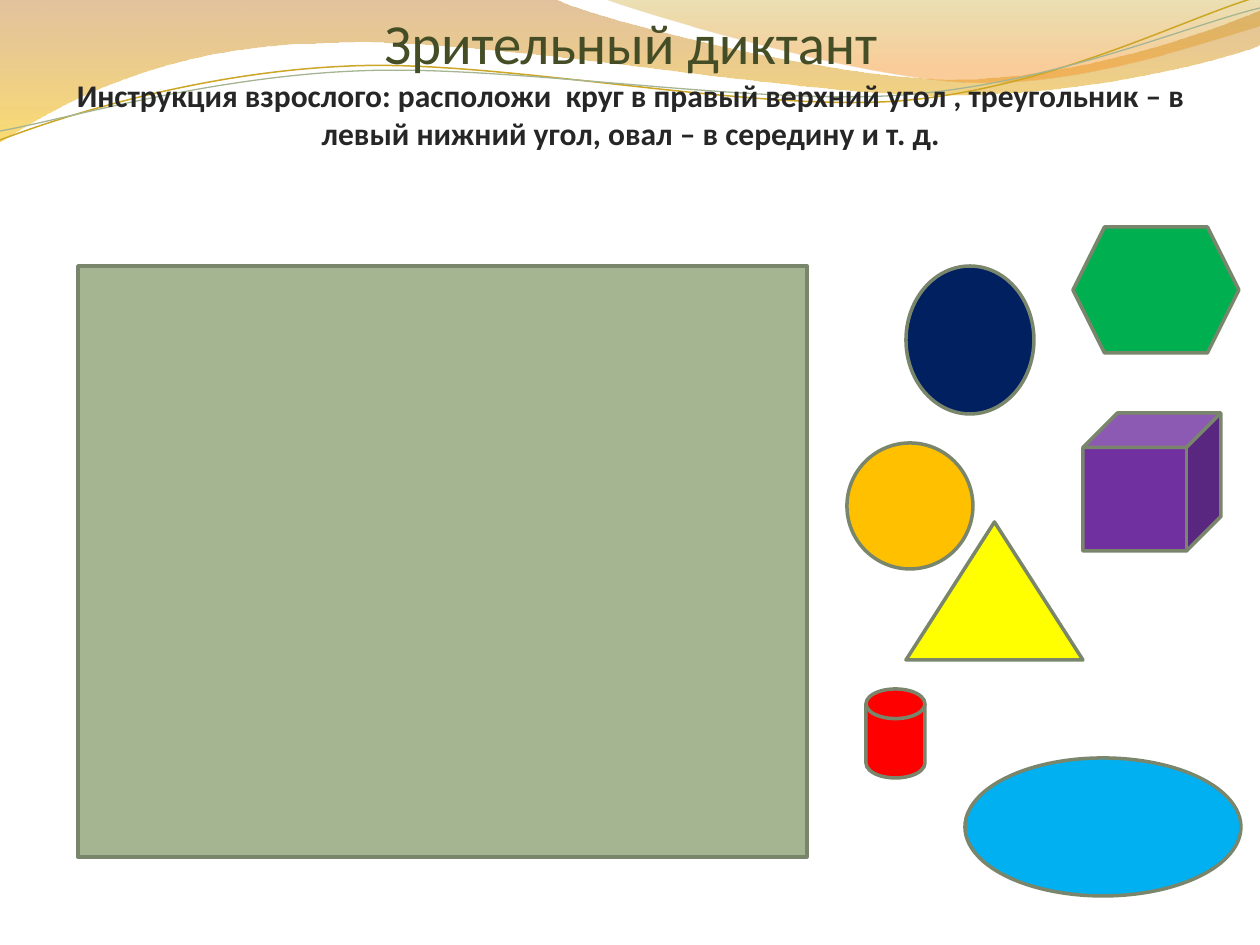
import pptx
import pptx.util
import pptx.dml.color
import pptx.enum.shapes
import pptx.enum.text
import pptx.oxml.ns
from lxml import etree

PX = 914400 / 126
KIND = pptx.enum.shapes.MSO_SHAPE

THEME = {
    "font": "Calibri",
    "title": {"size": 32.4, "color": "444D26", "bold": False},
    "task": {"size": 18, "color": "262626", "bold": True},
    "edge": ("7A866C", 2),
    "gold": ("CCA624", 0.85),
    "sage": ("A5B592", 0.75),
    "warm": [(0, "C07A28", 45), (1, "F7BF00", 55)],
    "sun": [(0, "C09709", 30), (0.8, "F59320", 45)],
}

BANDS = [
    ("warm", (0, 0), [
        (554, -1),
        (600, 21, 837, 79, 955, 79),
        (1075, 79, 1207, 33, 1260, 11),
        (1261, 45),
        (1239, 55, 1096, 96, 940, 95),
        (784, 95, 481, 35, 324, 43),
        (163, 45, 58, 105, -1, 142),
        (0, 0),
    ]),
    ("sun", (604, -1), [
        (642, 14, 859, 78, 969, 82),
        (1079, 87, 1211, 40, 1260, 26),
        (1260, 0),
        (604, -1),
    ]),
]

WAVES = [
    ("gold", (0, 140), [
        (60, 117, 199, 72, 349, 66),
        (498, 59, 747, 112, 898, 101),
        (1050, 89, 1182, 19, 1257, -3),
    ]),
    ("sage", (0, 131), [
        (59, 121, 207, 77, 357, 71),
        (508, 64, 752, 106, 903, 95),
        (1053, 84, 1186, 26, 1260, 8),
    ]),
]

FIGURES = [
    (KIND.RECTANGLE, (78, 266, 729, 591), "A5B592"),
    (KIND.OVAL, (906, 266, 128, 148), "002060"),
    (KIND.ISOSCELES_TRIANGLE, (906, 522, 177, 138), "FFFF00"),
    (KIND.OVAL, (965, 758, 276, 138), "00B0F0"),
    (KIND.CUBE, (1083, 413, 138, 138), "7030A0"),
    (KIND.FLOWCHART_MAGNETIC_DISK, (866, 689, 59, 89), "FF0000"),
    (KIND.HEXAGON, (1073, 227, 166, 126), "00B050"),
    (KIND.OVAL, (847, 443, 126, 126), "FFC000"),
]

WORDS = [
    ("title", "Зрительный диктант"),
    ("task", "Инструкция взрослого: расположи  круг в правый верхний угол , "
             "треугольник – в левый нижний угол, овал – в середину и т. д."),
]


def emu(px):
    return pptx.util.Emu(round(px * PX))


def rgb(code):
    return pptx.dml.color.RGBColor.from_string(code)


def tag(name):
    return pptx.oxml.ns.qn(name)


def apply(item, values):
    for name, value in values.items():
        setattr(item, name, value)


def place(item, box):
    apply(item, dict(zip(("left", "top", "width", "height"), map(emu, box))))


def stroke(shape, style):
    color, width = style
    shape.line.color.rgb = rgb(color)
    shape.line.width = pptx.util.Pt(width)


def curve(shape, line, leg):
    line.tag = tag("a:cubicBezTo")
    for spot, (x, y) in enumerate((leg[:2], leg[2:4])):
        point = etree.Element(tag("a:pt"))
        point.set("x", str(emu(x) - shape.left))
        point.set("y", str(emu(y) - shape.top))
        line.insert(spot, point)


def trace(slide, start, legs, close):
    pen = slide.shapes.build_freeform(*map(emu, start), scale=1.0)
    ends = [tuple(map(emu, leg[-2:])) for leg in legs]
    pen.add_line_segments(ends, close=close)
    shape = pen.convert_to_shape()
    shape.shadow.inherit = False
    lines = list(shape.element.spPr.iter(tag("a:lnTo")))
    for line, leg in zip(lines, legs):
        if len(leg) == 6:
            curve(shape, line, leg)
    return shape


def add_band(slide, name, start, legs):
    shape = trace(slide, start, legs, True)
    shape.line.fill.background()
    shape.fill.gradient()
    shape.fill.gradient_angle = 270
    for stop, (spot, color, alpha) in zip(shape.fill.gradient_stops, THEME[name]):
        stop.position = spot
        stop.color.rgb = rgb(color)
    tones = shape.element.spPr.iter(tag("a:srgbClr"))
    for tone, (spot, color, alpha) in zip(tones, THEME[name]):
        mark = etree.SubElement(tone, tag("a:alpha"))
        mark.set("val", str(alpha * 1000))
    return shape


def add_wave(slide, name, start, legs):
    shape = trace(slide, start, legs, False)
    shape.fill.background()
    stroke(shape, THEME[name])
    return shape


def add_decor(deck, slide):
    parts = [add_band(slide, *band) for band in BANDS]
    parts += [add_wave(slide, *wave) for wave in WAVES]
    first = deck.slide_master.shapes[0].element
    for part in parts:
        first.addprevious(part.element)


def add_figure(slide, kind, box, color):
    shape = slide.shapes.add_shape(kind, *map(emu, box))
    shape.shadow.inherit = False
    shape.fill.solid()
    shape.fill.fore_color.rgb = rgb(color)
    stroke(shape, THEME["edge"])


def set_title(slide):
    title = slide.shapes.title
    place(title, (59, 88, 1144, 158))
    frame = title.text_frame
    apply(frame, {
        "word_wrap": True,
        "auto_size": pptx.enum.text.MSO_AUTO_SIZE.NONE,
        "vertical_anchor": pptx.enum.text.MSO_ANCHOR.BOTTOM,
        "margin_left": 0,
        "margin_right": 0,
        "margin_top": 0,
        "margin_bottom": emu(94),
    })
    para = frame.paragraphs[0]
    para.alignment = pptx.enum.text.PP_ALIGN.CENTER
    for index, (name, text) in enumerate(WORDS):
        if index:
            para.add_line_break()
        look = THEME[name]
        run = para.add_run()
        run.text = text
        apply(run.font, {
            "name": THEME["font"],
            "size": pptx.util.Pt(look["size"]),
            "bold": look["bold"],
        })
        run.font.color.rgb = rgb(look["color"])


def main():
    deck = pptx.Presentation()
    apply(deck, {"slide_width": emu(1260), "slide_height": emu(945)})
    slide = deck.slides.add_slide(deck.slide_layouts[5])
    add_decor(deck, slide)
    set_title(slide)
    for figure in FIGURES:
        add_figure(slide, *figure)
    deck.save("out.pptx")


if __name__ == "__main__":
    main()
